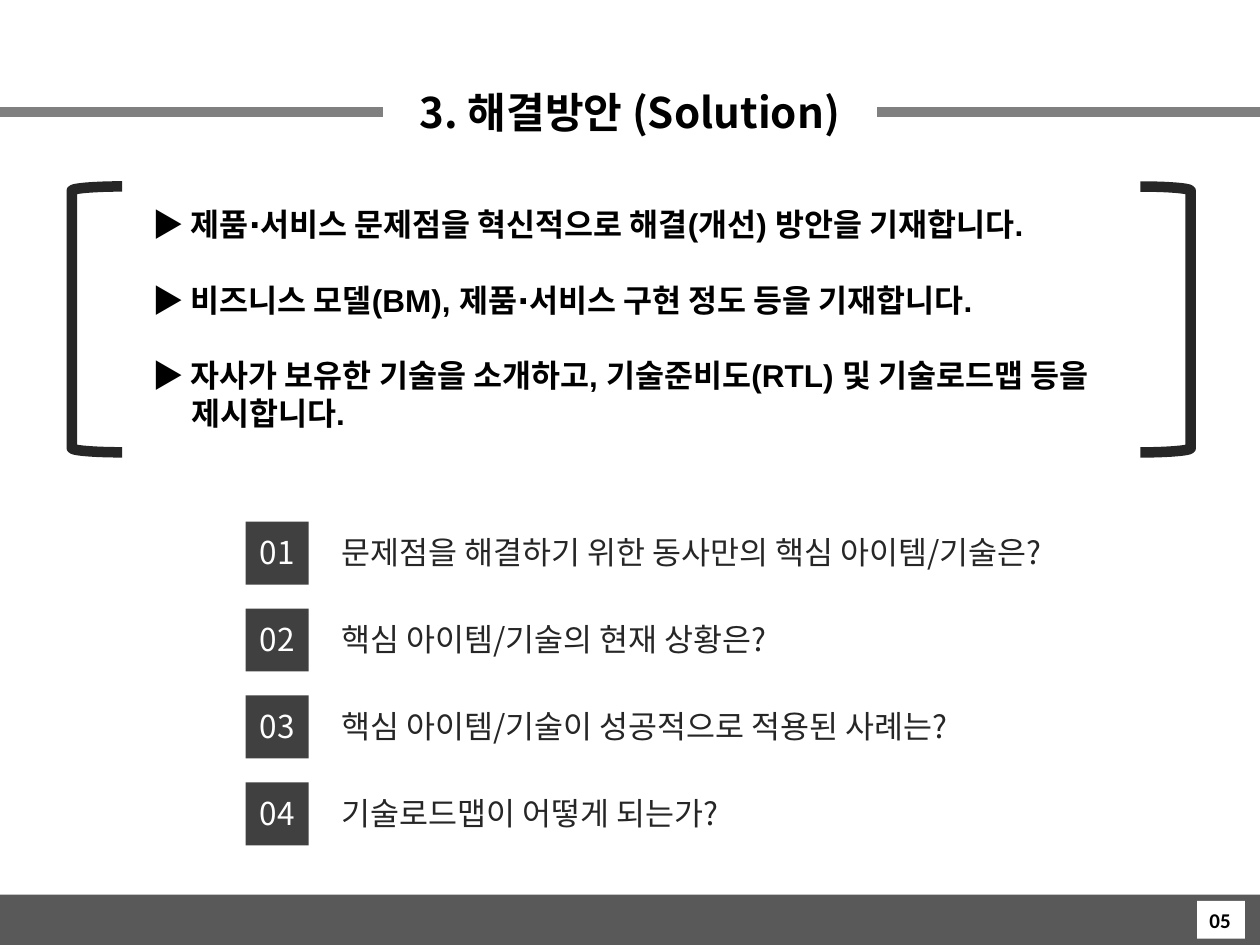
from dataclasses import dataclass

from lxml import etree
from pptx import Presentation
from pptx.dml.color import RGBColor
from pptx.enum.shapes import MSO_CONNECTOR, MSO_SHAPE
from pptx.enum.text import MSO_ANCHOR, PP_ALIGN
from pptx.oxml.ns import qn
from pptx.util import Inches, Pt

RECTANGLE = MSO_SHAPE.RECTANGLE
LEFT_BRACKET = MSO_SHAPE.LEFT_BRACKET
STRAIGHT = MSO_CONNECTOR.STRAIGHT
LEFT, CENTER = PP_ALIGN.LEFT, PP_ALIGN.CENTER
TOP, MIDDLE = MSO_ANCHOR.TOP, MSO_ANCHOR.MIDDLE


@dataclass(frozen=True)
class Theme:
    white: str = "FFFFFF"
    black: str = "000000"
    rule: str = "808080"
    footer: str = "595959"
    badge: str = "404040"
    ink: str = "262626"
    korean_font: str = "Noto Sans CJK KR"
    guide_font: str = "Arial"
    page_font: str = "Calibri"
    title_size: int = 24
    body_size: int = 18
    page_size: int = 12
    stroke: int = 6
    line_height: float = 1.2


THEME = Theme()

GUIDELINES = [
    "▶ 제품∙서비스 문제점을 혁신적으로 해결(개선) 방안을 기재합니다.",
    "▶ 비즈니스 모델(BM), 제품∙서비스 구현 정도 등을 기재합니다.",
    "▶ 자사가 보유한 기술을 소개하고, 기술준비도(RTL) 및 기술로드맵 등을 제시합니다.",
]
# Each question with the width at which it wraps
QUESTIONS = [
    ("문제점을 해결하기 위한 동사만의 핵심 아이템/기술은?", 5.81),
    ("핵심 아이템/기술의 현재 상황은?", 3.61),
    ("핵심 아이템/기술이 성공적으로 적용된 사례는?", 5.06),
    ("기술로드맵이 어떻게 되는가?", 3.5),
]


def add_box(shapes, left, top, width, height, color):
    box = shapes.add_shape(RECTANGLE, Inches(left), Inches(top), Inches(width), Inches(height))
    box.shadow.inherit = False
    box.fill.solid()
    box.fill.fore_color.rgb = RGBColor.from_string(color)
    box.line.fill.background()
    return box


def add_text_area(shapes, left, top, width, height):
    return shapes.add_textbox(Inches(left), Inches(top), Inches(width), Inches(height))


def write(shape, *paragraphs, font=THEME.korean_font, size=THEME.body_size, color=THEME.black,
          bold=False, align=LEFT, anchor=TOP, hanging=0, gap=0):
    """Fill a shape with paragraphs; hanging is in inches, gap in points."""
    frame = shape.text_frame
    frame.word_wrap = True
    frame.vertical_anchor = anchor
    for index, text in enumerate(paragraphs):
        paragraph = frame.paragraphs[0] if index == 0 else frame.add_paragraph()
        paragraph.alignment = align
        paragraph.line_spacing = Pt(size * THEME.line_height)
        if index < len(paragraphs) - 1:
            paragraph.space_after = Pt(gap)
        if hanging:
            properties = paragraph._p.get_or_add_pPr()
            properties.set("marL", str(Inches(hanging)))
            properties.set("indent", str(-Inches(hanging)))
        run = paragraph.add_run()
        run.text = text
        run.font.name = font
        run.font.size = Pt(size)
        run.font.bold = bold
        run.font.color.rgb = RGBColor.from_string(color)
        east_asian = etree.SubElement(run.font._element, qn("a:ea"))
        east_asian.set("typeface", THEME.korean_font)


def add_rule(shapes, start, end, top):
    rule = shapes.add_connector(STRAIGHT, Inches(start), Inches(top), Inches(end), Inches(top))
    rule.line.color.rgb = RGBColor.from_string(THEME.rule)
    rule.line.width = Pt(THEME.stroke)
    etree.SubElement(rule._element.spPr, qn("a:effectLst"))


def add_bracket(shapes, left, rotation=0):
    bracket = shapes.add_shape(LEFT_BRACKET, Inches(left), Inches(1.48), Inches(0.4), Inches(2.11))
    bracket.shadow.inherit = False
    bracket.rotation = rotation
    bracket.fill.background()
    bracket.line.color.rgb = RGBColor.from_string(THEME.ink)
    bracket.line.width = Pt(THEME.stroke)


def add_question(shapes, number, top, question, width):
    badge = shapes.add_group_shape().shapes
    add_box(badge, 1.95, top, 0.5, 0.5, THEME.badge)
    write(add_text_area(badge, 1.95, top + 0.04, 0.5, 0.4), f"{number:02}",
          color=THEME.white, align=CENTER)
    write(add_text_area(shapes, 2.61, top + 0.04, width, 0.4), question, color=THEME.ink)


def main():
    presentation = Presentation()
    presentation.slide_width, presentation.slide_height = Inches(10), Inches(7.5)
    shapes = presentation.slides.add_slide(presentation.slide_layouts[6]).shapes

    title = add_box(shapes, 1.75, 0.64, 6.5, 0.91, THEME.white)
    write(title, "3. 해결방안 (Solution)", size=THEME.title_size, bold=True, align=CENTER)
    for start, end in ((0, 3.04), (6.96, 10)):
        add_rule(shapes, start, end, 0.89)

    guide = add_text_area(shapes, 1.11, 1.58, 7.78, 1.92)
    write(guide, *GUIDELINES, font=THEME.guide_font, bold=True, hanging=0.31,
          gap=THEME.body_size * THEME.line_height)
    add_bracket(shapes, 0.57)
    add_bracket(shapes, 9.05, rotation=180)

    for index, (question, width) in enumerate(QUESTIONS):
        add_question(shapes, index + 1, 4.14 + 0.69 * index, question, width)

    add_box(shapes, 0, 7.1, 10, 0.4, THEME.footer)
    page = add_box(shapes, 9.5, 7.15, 0.38, 0.3, THEME.white)
    write(page, "05", font=THEME.page_font, size=THEME.page_size, bold=True, anchor=MIDDLE)

    presentation.save("out.pptx")


if __name__ == "__main__":
    main()
